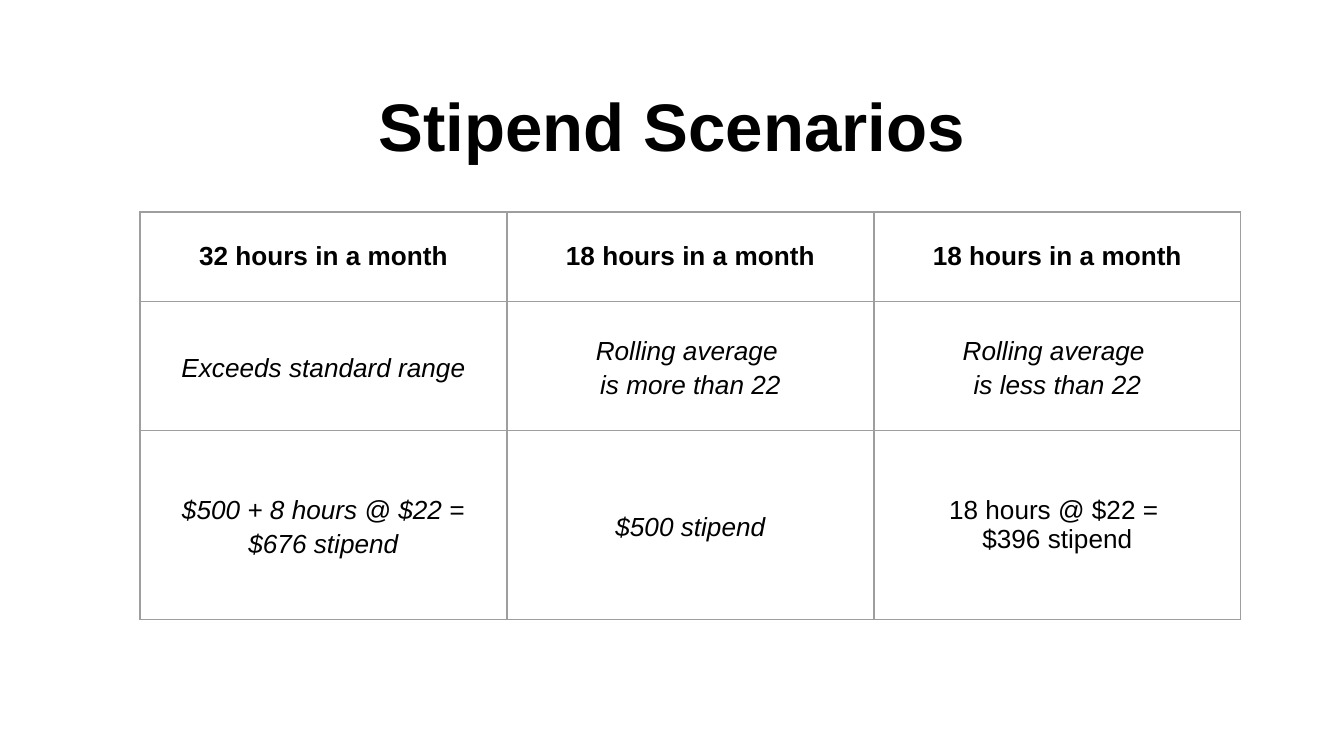
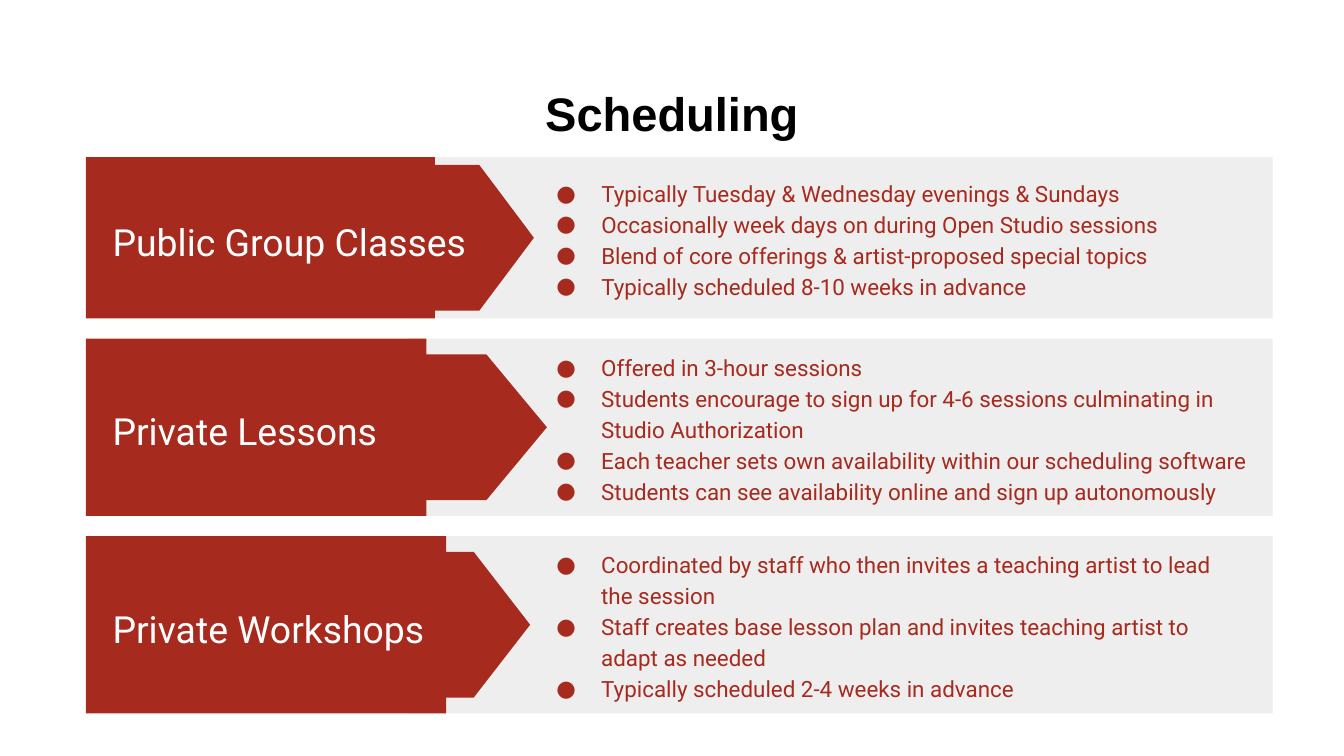
from typing import Any, NamedTuple

from lxml.etree import SubElement as Sub
from pptx import Presentation
from pptx.dml.color import RGBColor as Rgb
from pptx.enum.shapes import MSO_SHAPE as Kind
from pptx.enum.text import MSO_ANCHOR as Anchor, PP_ALIGN as Align
from pptx.oxml.ns import qn
from pptx.util import Pt

HUES = {"ink": "000000", "paper": "FFFFFF", "rule": "9E9E9E",
        "band": "EEEEEE", "red": "A72A1E"}
INSET = 7.2
SIDES = ("left", "top", "right", "bottom")

# Text formats
TITLE = {"name": "Arial", "bold": True}
HEAD = {"name": "Arial", "size": Pt(14), "bold": True}
PLAIN = HEAD | {"bold": False}
NOTE = PLAIN | {"italic": True}
LABEL = {"name": "Roboto", "size": Pt(20)}
POINT = {"name": "Roboto", "size": Pt(12)}


class Cell(NamedTuple):
    text: str
    form: dict[str, Any]
    lead: float = 1.0


class Band(NamedTuple):
    label: str
    points: list[str]
    high: float
    block: float   # width of the red block
    arrow: float   # length of the arrow
    mid: float     # horizontal centre of the arrow
    room: float    # width of the label box
    wide: float    # width of the list box


# Stipend table
COL = 196.6
ROWS = [48, 69, 101.4]
CELLS = [
    [Cell("32 hours in a month", HEAD),
     Cell("18 hours in a month", HEAD),
     Cell("18 hours in a month", HEAD)],
    [Cell("Exceeds standard range", NOTE, 1.15),
     Cell("Rolling average \vis more than 22", NOTE, 1.15),
     Cell("Rolling average \vis less than 22", NOTE, 1.15)],
    [Cell("$500 + 8 hours @ $22 =\v$676 stipend", NOTE, 1.15),
     Cell("$500 stipend", NOTE, 1.15),
     Cell("18 hours @ $22 = \n$396 stipend", PLAIN)],
]

# Schedule bands
TOP, GAP, LEFT = 84.2, 10.8, 46
BANDS = [
    Band("Public Group Classes",
         ["Typically Tuesday & Wednesday evenings & Sundays",
          "Occasionally week days on during Open Studio sessions",
          "Blend of core offerings & artist-proposed special topics",
          "Typically scheduled 8-10 weeks in advance"],
         86.4, 187, 146, 213, 234, 398),
    Band("Private Lessons",
         ["Offered in 3-hour sessions",
          "Students encourage to sign up for 4-6 sessions culminating in "
          "Studio Authorization",
          "Each teacher sets own availability within our scheduling software",
          "Students can see availability online and sign up autonomously"],
         95, 182.5, 162, 212, 234, 404),
    Band("Private Workshops",
         ["Coordinated by staff who then invites a teaching artist to lead "
          "the session",
          "Staff creates base lesson plan and invites teaching artist to "
          "adapt as needed",
          "Typically scheduled 2-4 weeks in advance"],
         95, 193, 151, 208.5, 193, 388),
]


def style(font: Any, form: dict[str, Any], hue: str) -> None:
    for key, value in form.items():
        setattr(font, key, value)
    font.color.rgb = Rgb.from_string(HUES[hue])


def fill(item: Any, hue: str) -> None:
    item.fill.solid()
    item.fill.fore_color.rgb = Rgb.from_string(HUES[hue])


def draw(shapes: Any, kind: Kind, x: float, y: float, w: float, h: float,
         hue: str) -> Any:
    shape = shapes.add_shape(kind, Pt(x), Pt(y), Pt(w), Pt(h))
    shape.shadow.inherit = False
    fill(shape, hue)
    shape.line.fill.background()
    return shape


def write(shapes: Any, text: str, x: float, y: float, w: float, h: float,
          form: dict[str, Any], hue: str, align: Align = Align.LEFT,
          anchor: Anchor = Anchor.MIDDLE, lead: float = 1.15,
          dots: bool = False) -> Any:
    frame = shapes.add_textbox(Pt(x), Pt(y), Pt(w), Pt(h)).text_frame
    frame.word_wrap = True
    frame.vertical_anchor = anchor
    for side in SIDES:
        setattr(frame, f"margin_{side}", Pt(INSET))
    frame.text = text
    for para in frame.paragraphs:
        para.alignment, para.line_spacing = align, lead
        if dots:
            bullet(para, hue)
        for run in para.runs:
            style(run.font, form, hue)
    return frame


def bullet(para: Any, hue: str) -> None:
    props = para._p.get_or_add_pPr()
    props.set("marL", str(Pt(36)))
    props.set("indent", str(Pt(-24)))
    tint = Sub(props, qn("a:buClr"))
    Sub(tint, qn("a:srgbClr"), val=HUES[hue])
    Sub(props, qn("a:buFont"), typeface="Roboto")
    Sub(props, qn("a:buChar"), char="●")


def start(deck: Any, title: str, size: float) -> Any:
    """Add a blank slide with the shared title."""
    shapes = deck.slides.add_slide(deck.slide_layouts[6]).shapes
    frame = write(shapes, title, 24.5, 35.3, 671, 45.4,
                  TITLE | {"size": Pt(size)}, "ink",
                  Align.CENTER, Anchor.TOP, 1.0)
    frame.margin_top = Pt(10)
    return shapes


def edge(cell: Any) -> None:
    """Rule all four sides; lines must come before the fill."""
    props = cell._tc.get_or_add_tcPr()
    for tag in ("lnL", "lnR", "lnT", "lnB"):
        line = Sub(props, qn(f"a:{tag}"), w=str(Pt(0.75)))
        Sub(Sub(line, qn("a:solidFill")), qn("a:srgbClr"), val=HUES["rule"])


def stipend(deck: Any) -> None:
    shapes = start(deck, "Stipend Scenarios", 36)
    table = shapes.add_table(3, 3, Pt(75), Pt(113.6),
                             Pt(3 * COL), Pt(sum(ROWS))).table
    table.first_row = table.horz_banding = False
    for col in table.columns:
        col.width = Pt(COL)
    for r, (high, row) in enumerate(zip(ROWS, CELLS)):
        table.rows[r].height = Pt(high)
        for c, data in enumerate(row):
            cell = table.cell(r, c)
            edge(cell)
            fill(cell, "paper")
            cell.vertical_anchor = Anchor.MIDDLE
            for side in SIDES:
                setattr(cell, f"margin_{side}", Pt(INSET))
            cell.text_frame.text = data.text
            for para in cell.text_frame.paragraphs:
                para.alignment, para.line_spacing = Align.CENTER, data.lead
                for run in para.runs:
                    style(run.font, data.form, "ink")


def strip(shapes: Any, band: Band, top: float) -> None:
    group = shapes.add_group_shape().shapes
    high, mid = band.high, top + band.high / 2
    draw(group, Kind.RECTANGLE, 220.3, top, 461.5, high, "band")
    draw(group, Kind.RECTANGLE, LEFT, top, band.block, high, "red")
    # The arrow is an upright pointer turned to face right
    thick = 78
    arrow = draw(group, Kind.FLOWCHART_OFFPAGE_CONNECTOR,
                 band.mid - thick / 2, mid - band.arrow / 2,
                 thick, band.arrow, "red")
    arrow.rotation = 270
    tall = 0.775 * high
    write(group, band.label, LEFT + INSET, mid - tall / 2, band.room, tall,
          LABEL, "paper")
    write(group, "\n".join(band.points), 279, top, band.wide, high,
          POINT, "red", dots=True)


def schedule(deck: Any) -> None:
    shapes = start(deck, "Scheduling", 25.2)
    top = TOP
    for band in BANDS:
        strip(shapes, band, top)
        top += band.high + GAP


def main() -> None:
    deck = Presentation()
    deck.slide_width, deck.slide_height = Pt(720), Pt(405)
    stipend(deck)
    schedule(deck)
    deck.save("out.pptx")


if __name__ == "__main__":
    main()
